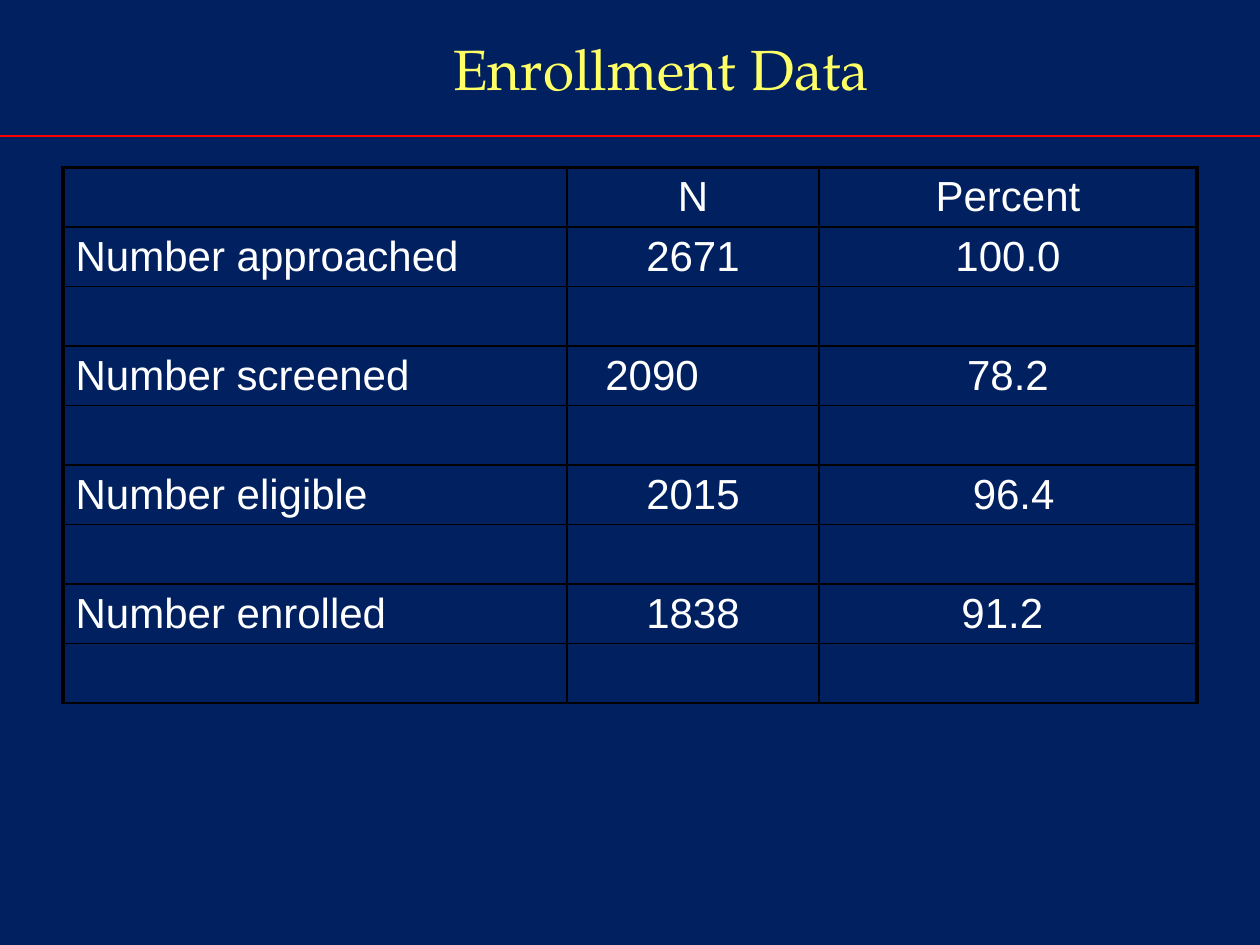
import pptx
import pptx.util
import pptx.dml.color
import pptx.enum.shapes
import pptx.enum.text
import pptx.oxml
import pptx.oxml.ns

Inches, Pt = pptx.util.Inches, pptx.util.Pt
ALIGN = pptx.enum.text.PP_ALIGN
MIDDLE = pptx.enum.text.MSO_ANCHOR.MIDDLE

COLORS = {"navy": "002060", "yellow": "FFFF66", "white": "FFFFFF",
          "red": "FF0000", "black": "000000"}
HEADINGS = ("", "N", "Percent")
COUNTS = [
    ("Number approached", "2671", "100.0"),
    ("Number screened", "2090", "78.2"),
    ("Number eligible", "2015", "96.4"),
    ("Number enrolled", "1838", "91.2"),
]
# Extra (left, right) margins, in inches, of the figures set off centre
NUDGES = {"2090": (0, 0.65), "96.4": (0.09, 0), "91.2": (0, 0.09)}


def color(name):
    return pptx.dml.color.RGBColor.from_string(COLORS[name])


class EnrollmentSlide:
    body_font, title_font = "Arial", "TeX Gyre Pagella"
    thin, thick = 1, 2.25
    columns, rows = 10, 7.5

    def __init__(self, deck):
        self.unit_x = deck.slide_width / self.columns
        self.unit_y = deck.slide_height / self.rows
        self.slide = deck.slides.add_slide(deck.slide_layouts[6])
        self.slide.background.fill.solid()
        self.slide.background.fill.fore_color.rgb = color("navy")

    def box(self, left, top, width, height):
        """Turn grid columns and rows into lengths."""
        return (int(left * self.unit_x), int(top * self.unit_y),
                int(width * self.unit_x), int(height * self.unit_y))

    def set_text(self, frame, text, font, size, ink, align=ALIGN.LEFT):
        paragraph = frame.paragraphs[0]
        paragraph.text = text
        paragraph.alignment = align
        paragraph.font.name = font
        paragraph.font.size = Pt(size)
        paragraph.font.color.rgb = color(ink)

    def title(self, text, *area):
        frame = self.slide.shapes.add_textbox(*self.box(*area)).text_frame
        frame.word_wrap = True
        frame.vertical_anchor = MIDDLE
        self.set_text(frame, text, self.title_font, 32.4, "yellow")

    def rule(self, row):
        left, y, width, _ = self.box(0, row, self.columns, 0)
        line = self.slide.shapes.add_connector(
            pptx.enum.shapes.MSO_CONNECTOR.STRAIGHT, left, y, width, y)
        line.line.color.rgb = color("red")
        line.line.width = Pt(0.75)
        line._element.spPr.append(pptx.oxml.parse_xml(
            f'<a:effectLst {pptx.oxml.ns.nsdecls("a")}/>'))

    def borders(self, cell, **widths):
        """Draw the cell's edges, which come before its fill in the XML."""
        properties = cell._tc.get_or_add_tcPr()
        for place, (side, width) in enumerate(widths.items()):
            properties.insert(place, pptx.oxml.parse_xml(
                f'<a:ln{side} {pptx.oxml.ns.nsdecls("a")} w="{Pt(width)}">'
                f'<a:solidFill><a:srgbClr val="{COLORS["black"]}"/></a:solidFill>'
                f'</a:ln{side}>'))

    def table(self, rows, shares, *area):
        left, top, width, height = self.box(*area)
        table = self.slide.shapes.add_table(
            len(rows), len(shares), left, top, width, height).table
        table.first_row = table.horz_banding = False
        for column, share in zip(table.columns, shares):
            column.width = int(width * share / sum(shares))
        for row in table.rows:
            row.height = height // len(rows)
        for r, texts in enumerate(rows):
            for c, text in enumerate(texts):
                cell = table.cell(r, c)
                before, after = NUDGES.get(text, (0, 0))
                cell.margin_left = Inches(0.1 + before)
                cell.margin_right = Inches(0.1 + after)
                cell.margin_top = cell.margin_bottom = Inches(0.04)
                cell.vertical_anchor = MIDDLE
                cell.fill.background()
                self.borders(
                    cell,
                    L=self.thin if c else self.thick,
                    R=self.thick if c == len(shares) - 1 else self.thin,
                    T=self.thin if r else self.thick,
                    B=self.thin)
                self.set_text(cell.text_frame, text, self.body_font, 24, "white",
                              ALIGN.CENTER if c else ALIGN.LEFT)


def main():
    deck = pptx.Presentation()
    deck.slide_width, deck.slide_height = Inches(10), Inches(7.5)
    slide = EnrollmentSlide(deck)
    blank = ("",) * len(HEADINGS)
    rows = [HEADINGS]
    for count in COUNTS:
        rows += [count, blank]
    slide.table(rows, (4, 2, 3), 0.5, 1.33, 9, 4.25)
    slide.rule(1.08)
    slide.title("Enrollment Data", 3.5, 0.25, 6.5, 0.58)
    deck.save("out.pptx")


if __name__ == "__main__":
    main()
